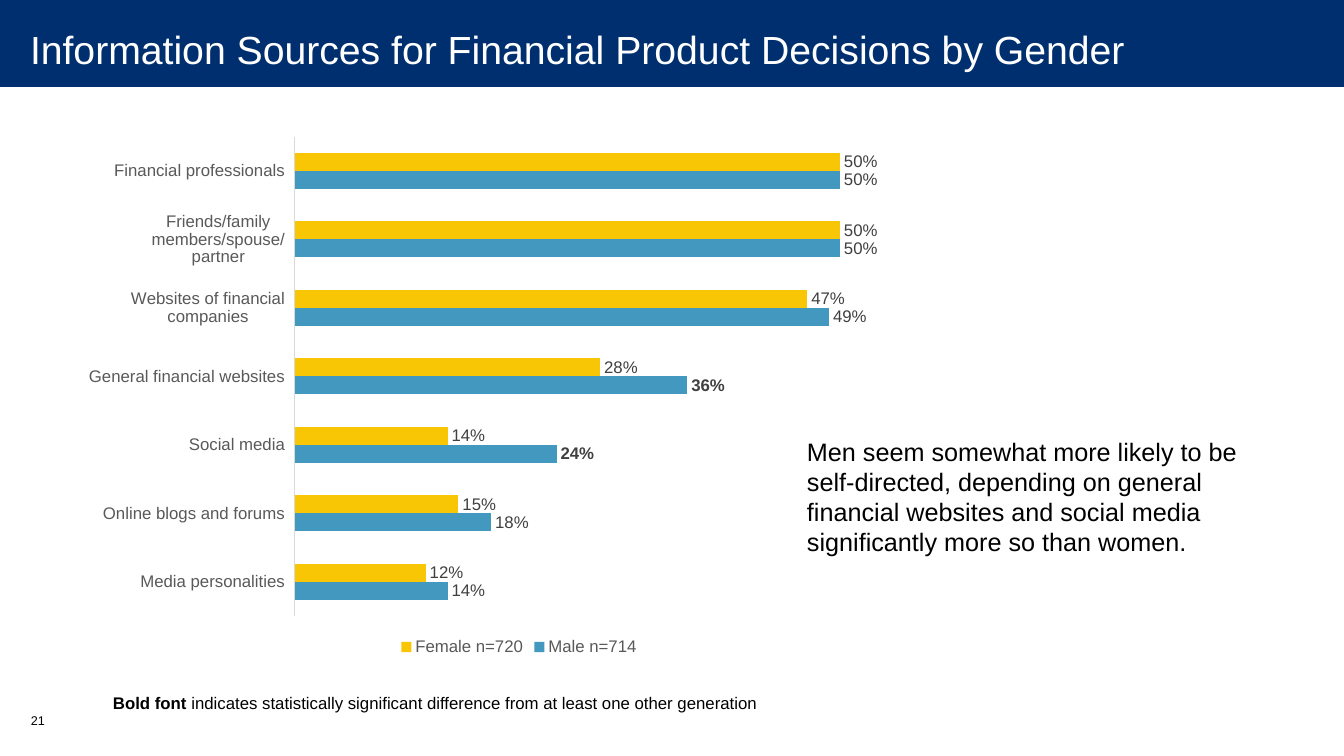
from pptx import Presentation
from pptx.chart.data import CategoryChartData
from pptx.dml.color import RGBColor
from pptx.enum.chart import XL_CHART_TYPE, XL_LABEL_POSITION, XL_LEGEND_POSITION, XL_TICK_LABEL_POSITION, XL_TICK_MARK
from pptx.enum.shapes import MSO_SHAPE
from pptx.enum.text import MSO_ANCHOR
from pptx.util import Pt

RECT = MSO_SHAPE.RECTANGLE
BARS = XL_CHART_TYPE.BAR_CLUSTERED
OUT = XL_LABEL_POSITION.OUTSIDE_END
BOTTOM = XL_LEGEND_POSITION.BOTTOM
LOW = XL_TICK_LABEL_POSITION.LOW
NONE = XL_TICK_MARK.NONE
TOP, MIDDLE = MSO_ANCHOR.TOP, MSO_ANCHOR.MIDDLE

FACE = "Arial"
SCALE = 914400 / 100.8
COLORS = {
    "navy": "002F70", "white": "FFFFFF", "black": "000000", "gray": "595959",
    "dark": "404040", "rule": "D9D9D9", "blue": "4298BE", "gold": "F9C606",
}
SOURCES = [
    "Media personalities", "Online blogs and forums", "Social media",
    "General financial websites", "Websites of financial companies",
    "Friends/family members/spouse/partner", "Financial professionals",
]
GROUPS = [
    ("Male n=714", "blue", [0.14, 0.18, 0.24, 0.36, 0.49, 0.5, 0.5], [2, 3]),
    ("Female n=720", "gold", [0.12, 0.15, 0.14, 0.28, 0.47, 0.5, 0.5], []),
]
FINDING = [
    "Men seem somewhat more likely to be",
    "self-directed, depending on general",
    "financial websites and social media",
    "significantly more so than women.",
]


def px(n):
    return round(n * SCALE)


def rgb(name):
    return RGBColor.from_string(COLORS[name])


def style(font, size, color, bold=False):
    font.name = FACE
    font.size = Pt(size)
    font.bold = bold
    font.color.rgb = rgb(color)


def add_text(slide, box, lines, size=12, color="black", pad=(10, 5, 10, 5), anchor=TOP, wrap=True):
    frame = slide.shapes.add_textbox(*map(px, box)).text_frame
    frame.word_wrap = wrap
    frame.vertical_anchor = anchor
    frame.margin_left, frame.margin_top, frame.margin_right, frame.margin_bottom = map(px, pad)
    for i, line in enumerate(lines):
        para = frame.paragraphs[0] if i == 0 else frame.add_paragraph()
        for text, bold in [(line, False)] if isinstance(line, str) else line:
            run = para.add_run()
            run.text = text
            style(run.font, size, color, bold)


def add_header(slide, box, title):
    left, top, width, height = box
    band = slide.shapes.add_shape(RECT, *map(px, box))
    band.shadow.inherit = False
    band.fill.solid()
    band.fill.fore_color.rgb = rgb("navy")
    band.line.fill.background()
    add_text(slide, (left, top, width, height + 11), [title], size=28, color="white",
             pad=(30, 0, 20, 0), anchor=MIDDLE, wrap=False)


def add_bars(slide, box):
    data = CategoryChartData(number_format="0%")
    data.categories = SOURCES
    for name, _, values, _ in GROUPS:
        data.add_series(name, values)
    chart = slide.shapes.add_chart(BARS, *map(px, box), data).chart
    style(chart.font, 10, "black")
    chart.has_title = False
    chart.has_legend = True
    chart.legend.position = BOTTOM
    chart.legend.include_in_layout = False
    style(chart.legend.font, 12, "gray")

    axis = chart.category_axis
    axis.major_tick_mark = axis.minor_tick_mark = NONE
    axis.tick_label_position = LOW
    axis.format.line.color.rgb = rgb("rule")
    axis.format.line.width = Pt(0.75)
    style(axis.tick_labels.font, 12, "gray")
    scale = chart.value_axis
    scale.visible = False
    scale.has_major_gridlines = False
    scale.minimum_scale, scale.maximum_scale = 0, 0.6

    plot = chart.plots[0]
    plot.gap_width = 182
    plot.overlap = 0
    plot.vary_by_categories = False
    for bars, (_, color, _, strong) in zip(plot.series, GROUPS):
        bars.format.fill.solid()
        bars.format.fill.fore_color.rgb = rgb(color)
        labels = bars.data_labels
        labels.show_value = True
        labels.position = OUT
        labels.number_format = "###0%"
        labels.number_format_is_linked = False
        style(labels.font, 12, "dark")
        for i in strong:
            label = bars.points[i].data_label
            style(label.font, 12, "dark", bold=True)
            label.position = OUT


def add_notes(slide, box):
    left, top, width, height = box
    note = [("Bold font", True),
            (" indicates statistically significant difference from at least one other generation", False)]
    add_text(slide, (left + 82, top, width - 82, 30), [note], wrap=False)
    add_text(slide, (left, top + 20, 49, height - 20), ["21"], size=9)


def main():
    deck = Presentation()
    deck.slide_width, deck.slide_height = px(1344), px(756)
    slide = deck.slides.add_slide(deck.slide_layouts[6])
    add_header(slide, (0, 0, 1344, 87), "Information Sources for Financial Product Decisions by Gender")
    add_bars(slide, (71, 126, 896, 534))
    add_text(slide, (797, 431, 455, 132), FINDING, size=18, wrap=False)
    add_notes(slide, (21, 688, 752, 60))
    deck.save("out.pptx")


if __name__ == "__main__":
    main()
